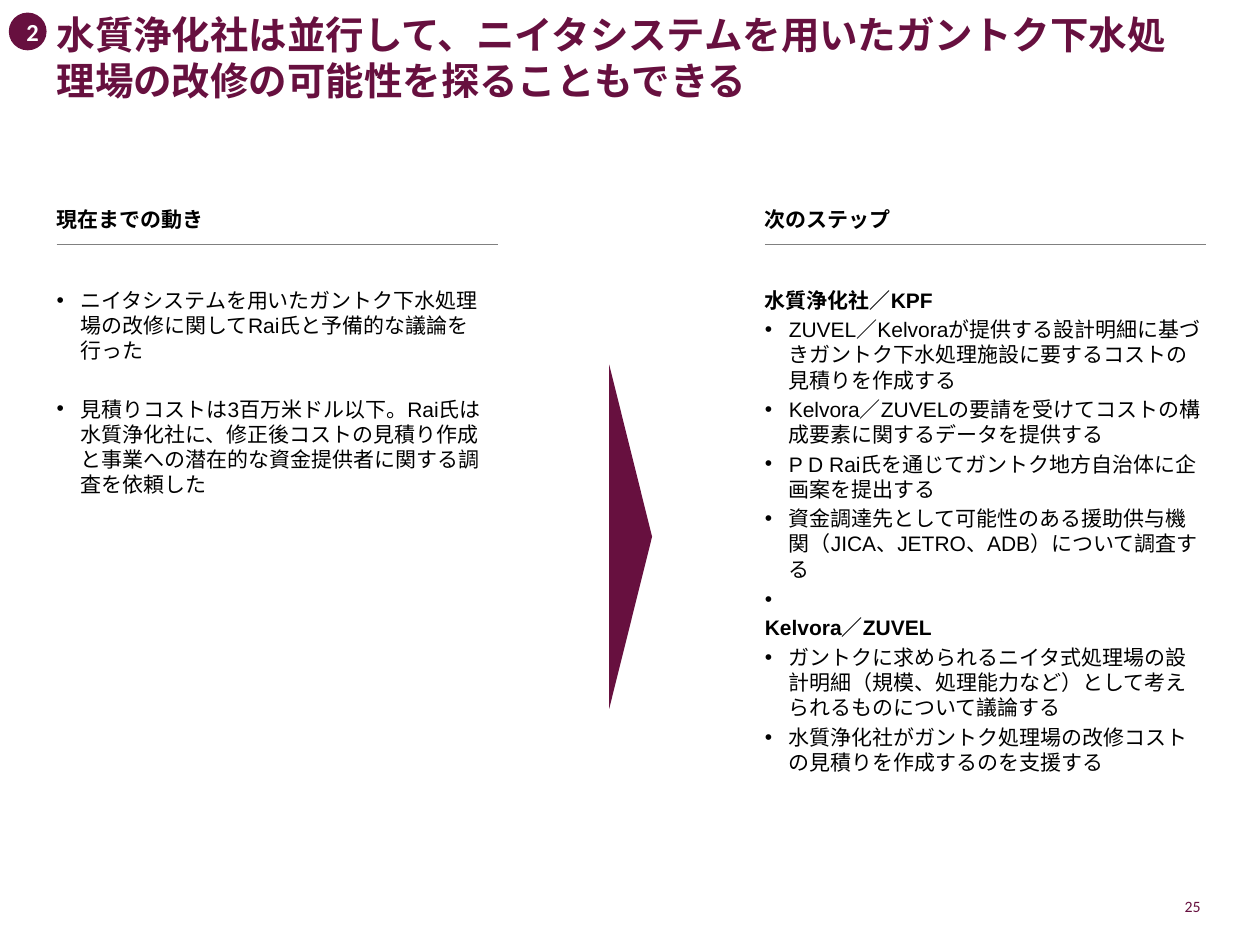
from lxml import etree
from pptx import Presentation
from pptx.dml.color import RGBColor
from pptx.enum.shapes import MSO_CONNECTOR, MSO_SHAPE
from pptx.enum.text import MSO_ANCHOR, MSO_AUTO_SIZE, PP_ALIGN
from pptx.oxml.ns import qn
from pptx.util import Inches, Pt

STRAIGHT = MSO_CONNECTOR.STRAIGHT
TRIANGLE, OVAL = MSO_SHAPE.ISOSCELES_TRIANGLE, MSO_SHAPE.OVAL
TOP, MIDDLE, BOTTOM = MSO_ANCHOR.TOP, MSO_ANCHOR.MIDDLE, MSO_ANCHOR.BOTTOM
LEFT, CENTER, RIGHT = PP_ALIGN.LEFT, PP_ALIGN.CENTER, PP_ALIGN.RIGHT
NO_AUTOFIT = MSO_AUTO_SIZE.NONE
PLUM = RGBColor(0x67, 0x10, 0x3F)
BLACK = RGBColor(0x00, 0x00, 0x00)
WHITE = RGBColor(0xFF, 0xFF, 0xFF)
GRAY = RGBColor(0x80, 0x80, 0x80)
CJK = "Noto Sans CJK JP"
COLUMN_WIDTH = Inches(3.5)


def prepare_box(box, left, top, width, height, anchor):
    box.left, box.top, box.width, box.height = left, top, width, height
    frame = box.text_frame
    frame.margin_left = frame.margin_right = frame.margin_top = frame.margin_bottom = 0
    frame.word_wrap = True
    frame.auto_size = NO_AUTOFIT
    frame.vertical_anchor = anchor
    return frame


def format_para(para, size, font, color, bold=False, align=LEFT):
    para.alignment = align
    for span in para.runs:
        span.font.size = Pt(size)
        span.font.name = font
        span.font.bold = bold
        span.font.color.rgb = color
        east_asian = etree.SubElement(span.font._element, qn("a:ea"))
        east_asian.set("typeface", CJK)


columns = [
    (0.45, "現在までの動き", [
        ("bullet", 0, "ニイタシステムを用いたガントク下水処理場の改修に関してRai氏と予備的な議論を行った"),
        ("bullet", 19, "見積りコストは3百万米ドル以下。Rai氏は水質浄化社に、修正後コストの見積り作成と事業への潜在的な資金提供者に関する調査を依頼した"),
    ]),
    (6.07, "次のステップ", [
        ("heading", 0, "水質浄化社／KPF"),
        ("bullet", 2.4, "ZUVEL／Kelvoraが提供する設計明細に基づきガントク下水処理施設に要するコストの見積りを作成する"),
        ("bullet", 2.4, "Kelvora／ZUVELの要請を受けてコストの構成要素に関するデータを提供する"),
        ("bullet", 2.4, "P D Rai氏を通じてガントク地方自治体に企画案を提出する"),
        ("bullet", 2.4, "資金調達先として可能性のある援助供与機関（JICA、JETRO、ADB）について調査する"),
        ("plain", 2.4, "•"),
        ("heading", 2.4, "Kelvora／ZUVEL"),
        ("bullet", 2.4, "ガントクに求められるニイタ式処理場の設計明細（規模、処理能力など）として考えられるものについて議論する"),
        ("bullet", 2.4, "水質浄化社がガントク処理場の改修コストの見積りを作成するのを支援する"),
    ]),
]

deck = Presentation()
deck.slide_width, deck.slide_height = Inches(10), Inches(7.5)
page = deck.slides.add_slide(deck.slide_layouts[3])
title, *bodies = page.placeholders

frame = prepare_box(title, Inches(0.45), Inches(0.15), Inches(9.09), Inches(0.67), BOTTOM)
frame.text = "水質浄化社は並行して、ニイタシステムを用いたガントク下水処理場の改修の可能性を探ることもできる"
frame.paragraphs[0].line_spacing = Pt(26.3)
format_para(frame.paragraphs[0], 22, CJK, PLUM, bold=True)

for body, (x, heading, items) in zip(bodies, columns):
    left = Inches(x)
    header = page.shapes.add_textbox(left, Inches(1.59), COLUMN_WIDTH, Inches(0.3))
    frame = prepare_box(header, left, Inches(1.59), COLUMN_WIDTH, Inches(0.3), MIDDLE)
    frame.text = heading
    format_para(frame.paragraphs[0], 12, CJK, BLACK, bold=True)

    rule = page.shapes.add_connector(STRAIGHT, left, Inches(1.94), left + COLUMN_WIDTH, Inches(1.94))
    rule.line.color.rgb = GRAY
    rule.line.width = Pt(0.25)
    etree.SubElement(rule._element.spPr, qn("a:effectLst"))

    frame = prepare_box(body, left, Inches(2.28), COLUMN_WIDTH, Inches(4.65), TOP)
    frame.text = "\n".join(text for kind, gap, text in items)
    for para, (kind, gap, text) in zip(frame.paragraphs, items):
        properties = para._p.get_or_add_pPr()
        indent = Inches(0.19) if kind == "bullet" else 0
        properties.set("marL", str(indent))
        properties.set("indent", str(-indent))
        if kind == "bullet":
            etree.SubElement(properties, qn("a:buFont")).set("typeface", "Arial")
            etree.SubElement(properties, qn("a:buChar")).set("char", "•")
        else:
            etree.SubElement(properties, qn("a:buNone"))
        para.line_spacing = Pt(14.4)
        para.space_before = Pt(gap)
        format_para(para, 12, "Arial", BLACK, bold=kind == "heading")

arrow = page.shapes.add_shape(TRIANGLE, Inches(3.64), Inches(4.09), Inches(2.73), Inches(0.34))
arrow.rotation = 90
badge = page.shapes.add_shape(OVAL, Inches(0.07), Inches(0.1), Inches(0.3), Inches(0.3))
for shape in (arrow, badge):
    shape.shadow.inherit = False
    shape.fill.solid()
    shape.fill.fore_color.rgb = PLUM
    shape.line.fill.background()

frame = prepare_box(badge, badge.left, badge.top, badge.width, badge.height, MIDDLE)
frame.margin_left = Inches(0.08)
frame.text = "2"
format_para(frame.paragraphs[0], 14, "Calibri", WHITE, bold=True, align=CENTER)

number = page.shapes.add_textbox(Inches(8.8), Inches(7.03), Inches(0.73), Inches(0.32))
frame = prepare_box(number, number.left, number.top, number.width, number.height, MIDDLE)
frame.text = "25"
format_para(frame.paragraphs[0], 9, "Calibri", PLUM, align=RIGHT)

deck.save("out.pptx")
